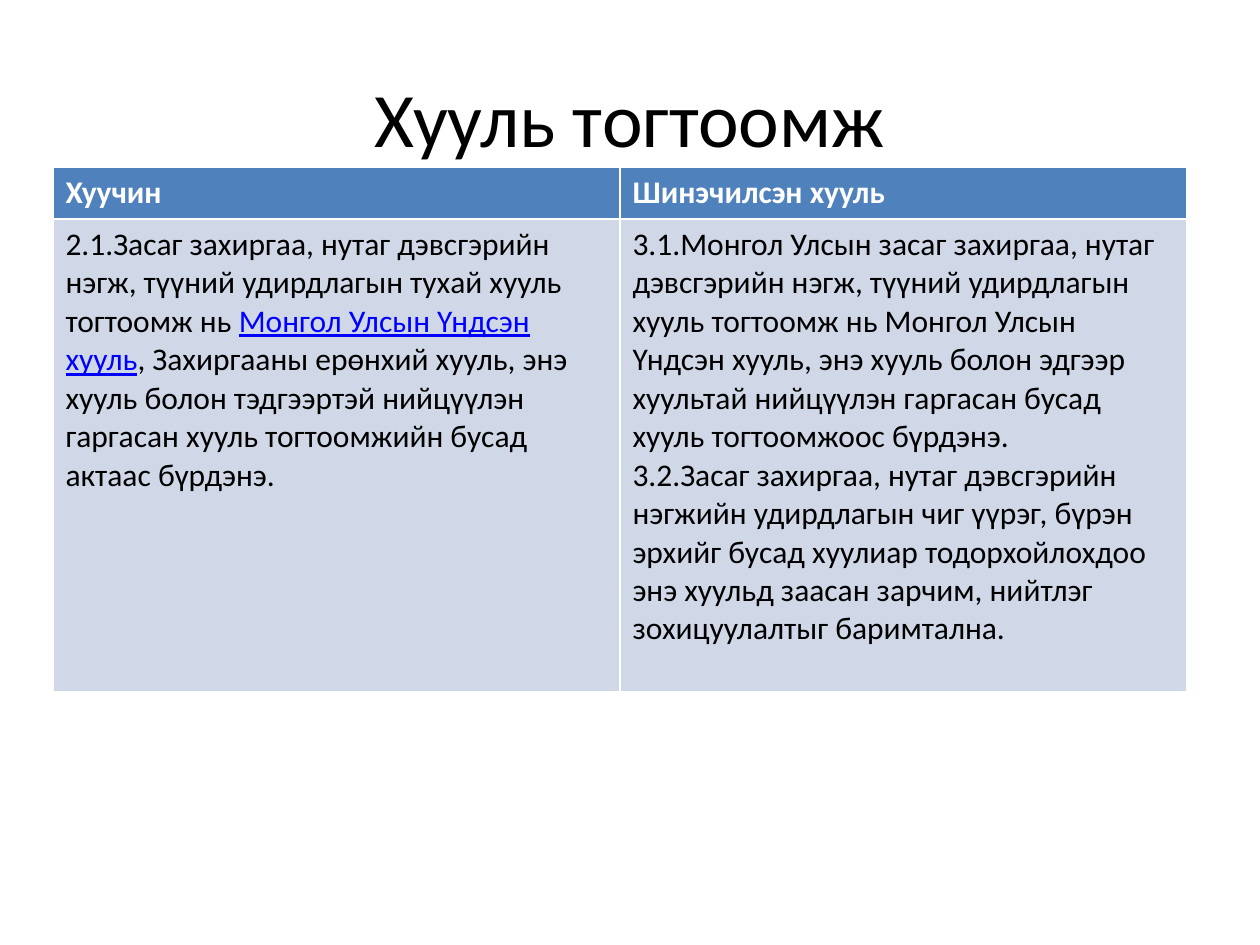
"""Build a slide that compares the old and the renewed law in a table."""
import dataclasses

import pptx
import pptx.dml.color
import pptx.enum.text
import pptx.util

Inches = pptx.util.Inches


@dataclasses.dataclass(frozen=True)
class Theme:
    font: str = "Calibri"
    title: int = 44
    body: int = 18
    ink: str = "000000"
    white: str = "FFFFFF"
    link: str = "0000FF"
    head: str = "4F81BD"
    pale: str = "D0D8E8"


THEME = Theme()
HEADS = ["Хуучин", "Шинэчилсэн хууль"]
LINK = "Монгол Улсын Үндсэн хууль"
OLD = [
    [
        "2.1.Засаг захиргаа, нутаг дэвсгэрийн нэгж, түүний удирдлагын тухай хууль тогтоомж нь ",
        LINK,
        ", Захиргааны ерөнхий хууль, энэ хууль болон тэдгээртэй нийцүүлэн гаргасан "
        "хууль тогтоомжийн бусад актаас бүрдэнэ.",
    ]
]
NEW = [
    [
        "3.1.Монгол Улсын засаг захиргаа, нутаг дэвсгэрийн нэгж, түүний удирдлагын "
        "хууль тогтоомж нь Монгол Улсын Үндсэн хууль, энэ хууль болон эдгээр хуультай "
        "нийцүүлэн гаргасан бусад хууль тогтоомжоос бүрдэнэ."
    ],
    [
        "3.2.Засаг захиргаа, нутаг дэвсгэрийн нэгжийн удирдлагын чиг үүрэг, бүрэн эрхийг "
        "бусад хуулиар тодорхойлохдоо энэ хуульд заасан зарчим, нийтлэг зохицуулалтыг "
        "баримтална."
    ],
]


def paint(run, size, color, bold=False):
    font = run.font
    font.name = THEME.font
    font.size = pptx.util.Pt(size)
    font.bold = bold
    font.color.rgb = pptx.dml.color.RGBColor.from_string(color)


def add_title(slide, text):
    title = slide.shapes.title
    title.left, title.top = Inches(0.5), Inches(0.3)
    title.width, title.height = Inches(9), Inches(1.25)
    frame = title.text_frame
    frame.text = text
    frame.vertical_anchor = pptx.enum.text.MSO_ANCHOR.MIDDLE
    line = frame.paragraphs[0]
    line.alignment = pptx.enum.text.PP_ALIGN.CENTER
    paint(line.runs[0], THEME.title, THEME.ink)


def fill_cell(cell, lines, back, color, bold=False):
    cell.fill.solid()
    cell.fill.fore_color.rgb = pptx.dml.color.RGBColor.from_string(back)
    frame = cell.text_frame
    frame.text = "\n".join(parts[0] for parts in lines)
    for line, parts in zip(frame.paragraphs, lines):
        for part in parts[1:]:
            line.add_run().text = part
        for run in line.runs:
            linked = run.text == LINK
            paint(run, THEME.body, THEME.link if linked else color, bold)
            run.font.underline = linked


def add_grid(slide):
    frame = slide.shapes.add_table(
        2, 2, Inches(0.42), Inches(1.33), Inches(9), Inches(4.16)
    )
    grid = frame.table
    grid.rows[0].height = Inches(0.41)
    grid.rows[1].height = Inches(3.75)
    for col, (head, lines) in enumerate(zip(HEADS, [OLD, NEW])):
        fill_cell(grid.cell(0, col), [[head]], THEME.head, THEME.white, True)
        fill_cell(grid.cell(1, col), lines, THEME.pale, THEME.ink)


def main():
    deck = pptx.Presentation()
    deck.slide_width, deck.slide_height = Inches(10), Inches(7.5)
    slide = deck.slides.add_slide(deck.slide_layouts[5])
    add_title(slide, "Хууль тогтоомж")
    add_grid(slide)
    deck.save("out.pptx")


if __name__ == "__main__":
    main()
